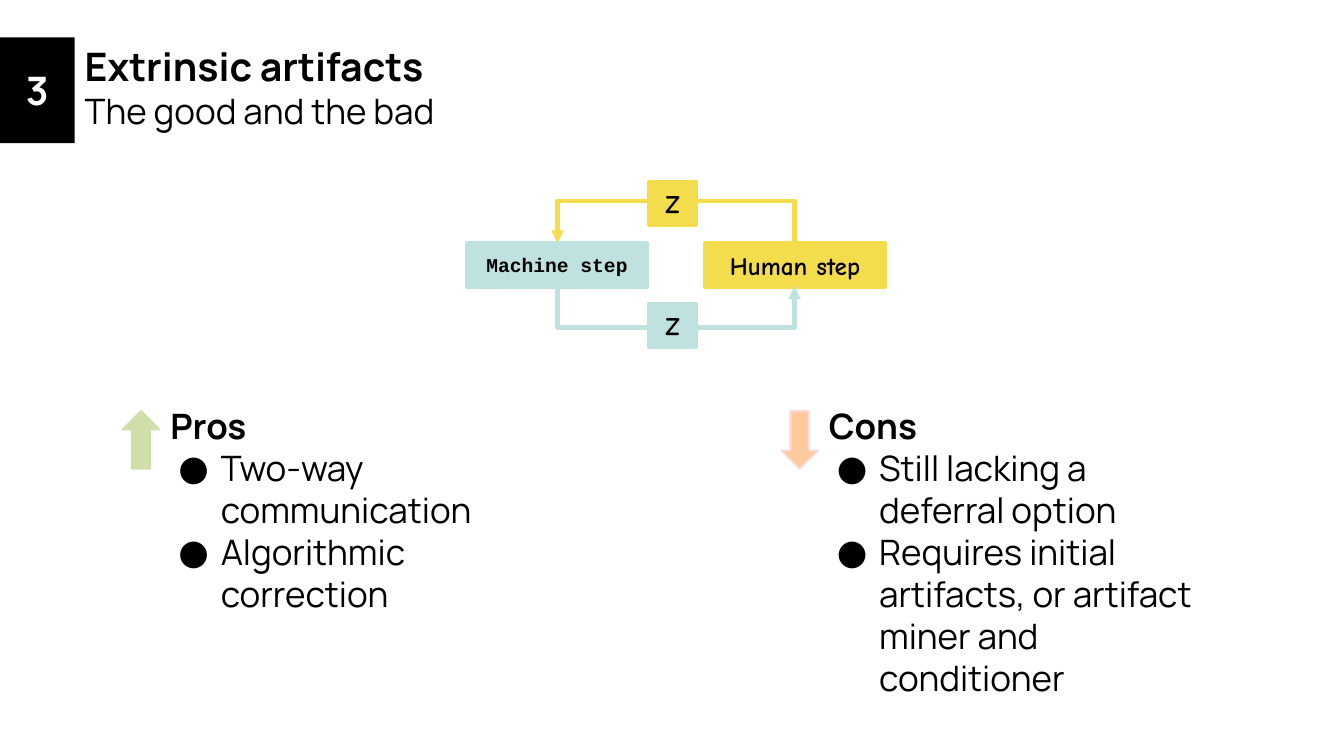
from lxml import etree
from pptx import Presentation
from pptx.dml.color import RGBColor
from pptx.enum.shapes import MSO_SHAPE
from pptx.enum.text import MSO_ANCHOR, MSO_AUTO_SIZE, PP_ALIGN
from pptx.oxml.ns import qn
from pptx.util import Inches, Pt

RECT, ARROW = MSO_SHAPE.RECTANGLE, MSO_SHAPE.UP_ARROW
TOP, MIDDLE = MSO_ANCHOR.TOP, MSO_ANCHOR.MIDDLE
LEFT, CENTER = PP_ALIGN.LEFT, PP_ALIGN.CENTER
FIXED = MSO_AUTO_SIZE.NONE

COLORS = {"black": "000000", "white": "FFFFFF", "teal": "BFE2E0",
          "yellow": "F4DD4C", "green": "D0DEAA", "peach": "FEC99B",
          "pink": "FBDAD3"}
MAIN, HAND, CODE = "Manrope", "Comic Neue", "Courier New"


def color(name):
    return RGBColor.from_string(COLORS[name])


class Deck:
    def __init__(self):
        self.file = Presentation()
        self.file.slide_width = Inches(13.33)
        self.file.slide_height = Inches(7.5)
        self.slide = self.file.slides.add_slide(self.file.slide_layouts[3])

    def style(self, para, size, bold=True, font=MAIN, tint="black", align=LEFT):
        para.alignment = align
        para.space_before = para.space_after = Pt(0)
        para.line_spacing = 1.0
        para.font.size, para.font.bold = Pt(size), bold
        para.font.name = font
        para.font.color.rgb = color(tint)

    def bullet(self, para, mark):
        """Hang the paragraph on a mark, or clear its bullet if mark is None."""
        props = para._p.get_or_add_pPr()
        props.set("marL", str(Inches(0.5) if mark else 0))
        props.set("indent", str(Inches(-0.42) if mark else 0))
        if mark:
            tint = etree.SubElement(props, qn("a:buClr"))
            etree.SubElement(tint, qn("a:srgbClr"), val=COLORS["black"])
            etree.SubElement(props, qn("a:buFont"), typeface=MAIN)
            etree.SubElement(props, qn("a:buChar"), char=mark)
        else:
            etree.SubElement(props, qn("a:buNone"))

    def holder(self, index, box, lines, pad):
        """Move a placeholder, fill it and return its paragraphs."""
        shape = self.slide.placeholders[index]
        shape.left, shape.top, shape.width, shape.height = map(Inches, box)
        frame = shape.text_frame
        frame.word_wrap, frame.auto_size = True, FIXED
        frame.vertical_anchor = TOP
        frame.margin_left = frame.margin_right = Inches(0.1)
        frame.margin_top = frame.margin_bottom = Inches(pad)
        frame.text = "\n".join(lines)
        return frame.paragraphs

    def title(self, head, sub):
        box = (0.74, 0.37, 11.55, 0.99)
        first, second = self.holder(0, box, (head, sub), 0.05)
        self.style(first, 28)
        self.style(second, 25, bold=False)

    def points(self, index, box, head, items):
        paras = self.holder(index, box, (head, *items), 0.1)
        for row, para in enumerate(paras):
            self.bullet(para, "●" if row else None)
            self.style(para, 25, bold=row == 0)

    def shape(self, kind, box, fill, line=None, width=2.25):
        item = self.slide.shapes.add_shape(kind, *map(Inches, box))
        item.shadow.inherit = False
        item.fill.solid()
        item.fill.fore_color.rgb = color(fill)
        if line:
            item.line.color.rgb = color(line)
            item.line.width = Pt(width)
        else:
            item.line.fill.background()
        return item

    def label(self, item, text, size, font=MAIN, tint="black"):
        frame = item.text_frame
        frame.word_wrap, frame.vertical_anchor = True, MIDDLE
        frame.margin_top = frame.margin_bottom = Inches(0.05)
        frame.text = text
        self.style(frame.paragraphs[0], size, font=font, tint=tint, align=CENTER)

    def box(self, box, fill, text, size, font):
        self.label(self.shape(RECT, box, fill, fill), text, size, font)

    def route(self, points, tint):
        """Draw an open path that ends in an arrowhead."""
        start, *rest = [tuple(map(Inches, point)) for point in points]
        pen = self.slide.shapes.build_freeform(*start)
        pen.add_line_segments(rest, close=False)
        path = pen.convert_to_shape()
        path.shadow.inherit = False
        path.fill.background()
        path.line.color.rgb = color(tint)
        path.line.width = Pt(3)
        etree.SubElement(path.line._get_or_add_ln(), qn("a:tailEnd"), type="triangle")


def main():
    deck = Deck()
    deck.title("Extrinsic artifacts", "The good and the bad")
    number = deck.shape(RECT, (0, 0.37, 0.74, 1.05), "black")
    deck.label(number, "3", 28, tint="white")

    deck.points(1, (1.59, 3.91, 3.99, 1.02), "Pros",
                ("Two-way communication", "Algorithmic correction"))
    deck.points(2, (8.12, 3.91, 3.99, 3.24), "Cons",
                ("Still lacking a deferral option",
                 "Requires initial artifacts, or artifact miner and conditioner"))
    deck.shape(ARROW, (1.22, 4.08, 0.36, 0.57), "green", "green", 1.5)
    down = deck.shape(ARROW, (7.75, 4.08, 0.36, 0.57), "peach", "pink", 1.5)
    down.rotation = 180

    left, right = 5.53, 7.88
    deck.box((4.63, 2.41, 1.79, 0.44), "teal", "Machine step", 14, CODE)
    deck.box((6.99, 2.41, 1.79, 0.44), "yellow", "Human step", 18, HAND)
    for tint, start, end, edge, bend, top in (
            ("teal", left, right, 2.84, 3.25, 3.01),
            ("yellow", right, left, 2.41, 1.99, 1.8)):
        deck.route([(start, edge), (start, bend), (end, bend), (end, edge)], tint)
        deck.box((6.43, top, 0.48, 0.44), tint, "Z", 18, HAND)

    deck.file.save("out.pptx")


if __name__ == "__main__":
    main()
